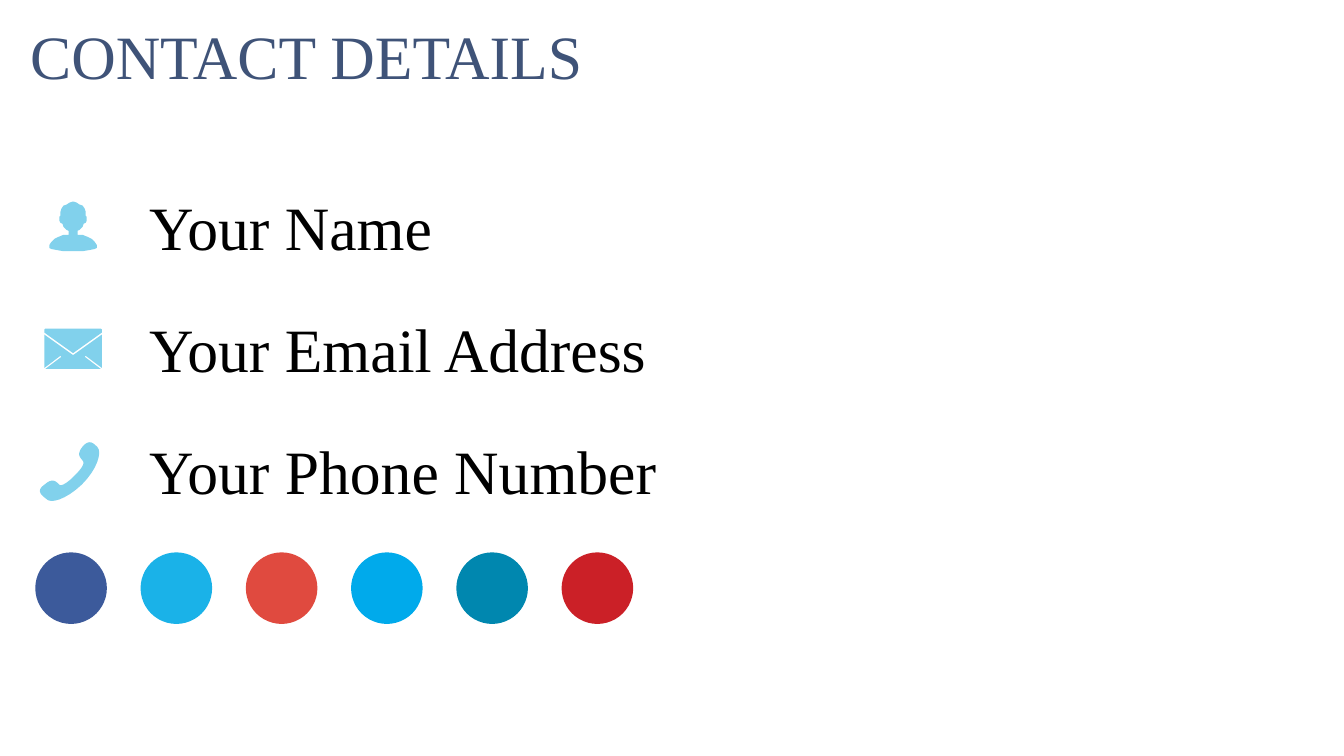
import pptx
import pptx.dml.color
import pptx.enum.shapes
import pptx.enum.text
import pptx.util

Inches = pptx.util.Inches


def colour(hex_code):
    return pptx.dml.color.RGBColor.from_string(hex_code)


def write(frame, text, font="Times New Roman", size=44, fill="000000"):
    frame.word_wrap = False
    frame.auto_size = pptx.enum.text.MSO_AUTO_SIZE.SHAPE_TO_FIT_TEXT
    frame.vertical_anchor = pptx.enum.text.MSO_ANCHOR.TOP
    paragraph = frame.paragraphs[0]
    paragraph.alignment = pptx.enum.text.PP_ALIGN.LEFT
    run = paragraph.add_run()
    run.text = text
    run.font.name = font
    run.font.size = pptx.util.Pt(size)
    run.font.color.rgb = colour(fill)


def mirrored(half, axis):
    return half + [(2 * axis - x, y) for x, y in reversed(half)]


def curve(start, segments, steps=8):
    points = [start]
    for bend_a, bend_b, end in segments:
        origin = points[-1]
        for step in range(1, steps + 1):
            t = step / steps
            weights = ((1 - t) ** 3, 3 * t * (1 - t) ** 2, 3 * t * t * (1 - t), t ** 3)
            corners = (origin, bend_a, bend_b, end)
            points.append(tuple(
                sum(w * corner[axis] for w, corner in zip(weights, corners))
                for axis in (0, 1)))
    return points


class ContactSlide:
    accent = "81D1EC"
    heading = "3F5378"

    def __init__(self, deck):
        self.slide = deck.slides.add_slide(deck.slide_layouts[5])
        self.shapes = self.slide.shapes

    def title(self, text, left, top, width, height):
        heading = self.shapes.title
        heading.left, heading.top = Inches(left), Inches(top)
        heading.width, heading.height = Inches(width), Inches(height)
        write(heading.text_frame, text, fill=self.heading)

    def label(self, text, left, top, width, height):
        box = self.shapes.add_textbox(
            Inches(left), Inches(top), Inches(width), Inches(height))
        write(box.text_frame, text)

    def paint(self, shape, fill):
        shape.shadow.inherit = False
        shape.fill.solid()
        shape.fill.fore_color.rgb = colour(fill)
        shape.line.fill.background()

    def outline(self, points):
        corners = [(Inches(x), Inches(y)) for x, y in points]
        builder = self.shapes.build_freeform(*corners[0])
        builder.add_line_segments(corners[1:], close=True)
        self.paint(builder.convert_to_shape(), self.accent)

    def disc(self, left, top, size, fill):
        circle = self.shapes.add_shape(
            pptx.enum.shapes.MSO_SHAPE.OVAL,
            Inches(left), Inches(top), Inches(size), Inches(size))
        self.paint(circle, fill)


def main():
    deck = pptx.Presentation()
    deck.slide_width, deck.slide_height = Inches(13.33), Inches(7.5)
    contact = ContactSlide(deck)
    contact.title("CONTACT DETAILS", 0.2, 0.13, 5.73, 0.84)

    details = [("Your Name", 3.03), ("Your Email Address", 5.33),
               ("Your Phone Number", 5.27)]
    for row, (detail, width) in enumerate(details):
        contact.label(detail, 1.38, 1.83 + 1.21 * row, width, 0.84)

    person = [(0.72, 2), (0.69, 2.01), (0.66, 2.03), (0.63, 2.04), (0.61, 2.07),
              (0.6, 2.1), (0.6, 2.14), (0.59, 2.15), (0.59, 2.19), (0.6, 2.21),
              (0.62, 2.22), (0.63, 2.25), (0.66, 2.28), (0.68, 2.29), (0.68, 2.33),
              (0.63, 2.33), (0.58, 2.35), (0.54, 2.37), (0.51, 2.4), (0.49, 2.43),
              (0.49, 2.46), (0.51, 2.47), (0.56, 2.48), (0.62, 2.49), (0.72, 2.49)]
    contact.outline(mirrored(person, 0.725))

    flap = [(0.45, 3.26), (0.44, 3.27), (0.44, 3.3), (0.72, 3.5)]
    envelope = [(0.72, 3.52), (0.44, 3.32), (0.44, 3.65), (0.6, 3.53),
                (0.61, 3.54), (0.45, 3.66)]
    for half in (flap, envelope):
        contact.outline(mirrored(half, 0.725))

    handset = curve((0.73, 4.73), [
        ((0.68, 4.78), (0.61, 4.83), (0.59, 4.81)),
        ((0.55, 4.77), (0.52, 4.74), (0.44, 4.81)),
        ((0.35, 4.87), (0.42, 4.92), (0.46, 4.95)),
        ((0.5, 5), (0.65, 4.96), (0.81, 4.81)),
        ((0.97, 4.65), (1.01, 4.49), (0.97, 4.44)),
        ((0.93, 4.4), (0.89, 4.35), (0.82, 4.43)),
        ((0.76, 4.51), (0.79, 4.53), (0.82, 4.57)),
        ((0.85, 4.6), (0.8, 4.66), (0.73, 4.73))])
    contact.outline(handset)

    channels = ["3C5A9B", "1AB2E8", "E04A3F", "00AAEB", "0087AF", "CB2027"]
    first, last = 0.35, 5.57
    pitch = (last - first) / (len(channels) - 1)
    for place, fill in enumerate(channels):
        contact.disc(first + pitch * place, 5.48, 0.71, fill)

    deck.save("out.pptx")


if __name__ == "__main__":
    main()
